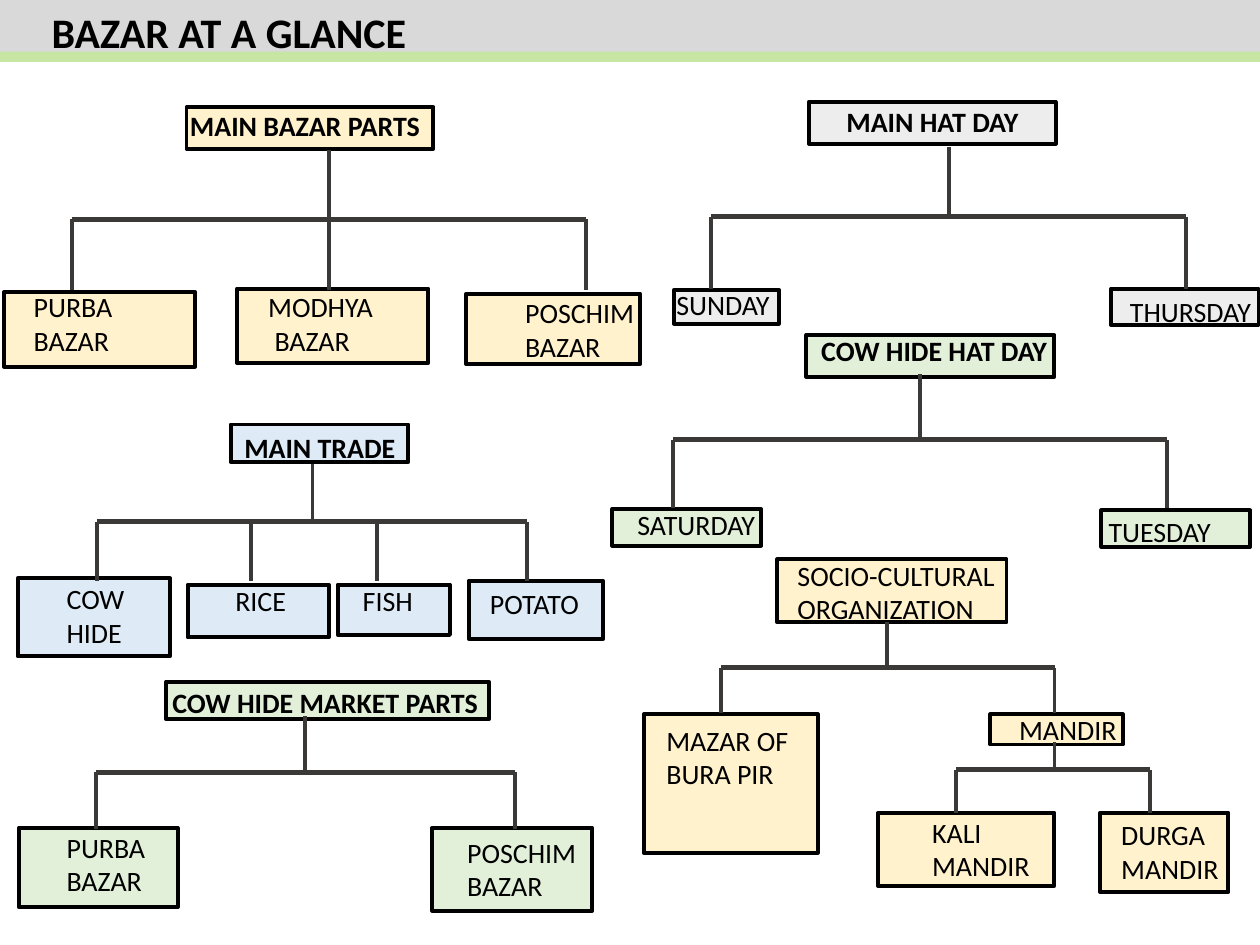
from dataclasses import dataclass

from lxml import etree
from pptx import Presentation
from pptx.dml.color import RGBColor
from pptx.enum import shapes as es, text as et
from pptx.oxml.ns import qn
from pptx.util import Pt

BLACK = RGBColor(0x00, 0x00, 0x00)
CHARCOAL = RGBColor(0x3B, 0x38, 0x38)
BAND_GREY = RGBColor(0xD9, 0xD9, 0xD9)
BAND_GREEN = RGBColor(0xC7, 0xE6, 0xA4)
CREAM = RGBColor(0xFF, 0xF2, 0xCC)
GREY = RGBColor(0xED, 0xED, 0xED)
BLUE = RGBColor(0xDE, 0xEB, 0xF7)
GREEN = RGBColor(0xE2, 0xF0, 0xD9)

FONT = "Calibri"
Area = tuple[float, float, float, float]  # left, top, width, height in points


@dataclass
class Node:
    text: str
    box: Area
    label: Area
    bold: bool = False
    last_indent: float = 0


@dataclass
class Branch:
    """A stem down to a bar, and drops from the bar to the boxes below."""
    stem_x: float
    top: float
    bar_y: float
    bottom: float
    drops: list[float]


@dataclass
class Tree:
    fill: RGBColor
    nodes: list[Node]
    branches: list[Branch]


TREES = [
    Tree(CREAM, [
        Node("MAIN BAZAR PARTS", (106.6, 61.2, 141.1, 23.8), (101.5, 58.3, 191.5, 46), bold=True),
        Node("PURBA BAZAR", (2.2, 167, 109.4, 42.5), (12.2, 162, 94.3, 65.5)),
        Node("MODHYA\nBAZAR", (135.4, 164.9, 109.4, 42.5), (146.2, 162, 89.3, 46), last_indent=3.6),
        Node("POSCHIM\nBAZAR", (266.4, 167.8, 99.4, 40.3), (293, 165.6, 92.2, 46)),
    ], [Branch(187.9, 85.7, 125.3, 165.6, [41, 187.9, 334.8])]),
    Tree(GREY, [
        Node("MAIN HAT DAY", (462.2, 58.3, 141.1, 23.8), (476.6, 56.2, 164.9, 48.2), bold=True),
        Node("SUNDAY", (385.2, 165.6, 59.8, 19.4), (379.4, 160.6, 87.1, 48.2)),
        Node("THURSDAY", (635, 164.9, 84.2, 20.9), (638.6, 164.9, 90, 27.4)),
    ], [Branch(542.2, 84.2, 123.8, 164.9, [406.1, 677.5])]),
    Tree(BLUE, [
        Node("MAIN TRADE", (131.8, 242.6, 101.5, 21.6), (132.5, 242.6, 108.7, 26.6), bold=True),
        Node("COW HIDE", (10.1, 330.5, 87.1, 44.6), (31, 329, 79.2, 65.5)),
        Node("RICE", (107.3, 334.1, 80.6, 30.2), (127.4, 329.8, 79.2, 46)),
        Node("FISH", (193, 334.1, 64.1, 28.8), (200.2, 329.8, 79.2, 46)),
        Node("POTATO", (267.8, 331.9, 77, 33.1), (272.9, 331.9, 71.3, 26.6)),
    ], [Branch(178.6, 265, 298.1, 331.9, [55.4, 143.3, 215.3, 301])]),
    Tree(GREEN, [
        Node("COW HIDE MARKET PARTS", (95, 389.5, 184.3, 21.6), (91.4, 388.1, 203, 46), bold=True),
        Node("PURBA BAZAR", (10.8, 473, 90.7, 45.4), (31, 470.9, 77, 65.5)),
        Node("POSCHIM\nBAZAR", (247, 473, 91.4, 47.5), (259.9, 473.8, 89.3, 46)),
    ], [Branch(174.2, 409, 441.4, 473.8, [54.7, 294.5])]),
    Tree(GREEN, [
        Node("COW HIDE HAT DAY", (460.8, 191.5, 141.8, 23.8), (462.2, 187.2, 171.4, 38.9), bold=True),
        Node("SATURDAY", (349.9, 290.9, 85, 20.9), (357.1, 286.6, 90.7, 38.9)),
        Node("TUESDAY", (629.3, 291.6, 85, 20.9), (626.4, 290.2, 88.6, 22.3)),
    ], [Branch(525.6, 213.8, 251.3, 290.2, [384.5, 666.7])]),
    Tree(CREAM, [
        Node("SOCIO-CULTURAL ORGANIZATION", (444.2, 319.7, 131, 36), (448.6, 315.4, 144.7, 65.5)),
        Node("MAZAR OF BURA PIR", (367.9, 408.2, 99.4, 79.2), (373.7, 409.7, 92.2, 65.5)),
        Node("MANDIR", (565.9, 408.2, 75.6, 17.3), (575.3, 403.9, 82.1, 26.6)),
        Node("KALI\nMANDIR", (501.8, 464.4, 100.8, 41.8), (525.6, 462.2, 77, 46)),
        Node("DURGA\nMANDIR", (628.6, 464.4, 73.4, 45.4), (633.6, 463.7, 72.7, 46)),
    ], [Branch(506.9, 355.7, 381.6, 407.5, [411.8, 602.6]),
        Branch(602.6, 424.1, 439.9, 464.4, [546.5, 657.4])]),
]


def write(sp, text: str, *, size: float = 16, bold: bool = False, last_indent: float = 0) -> None:
    tf = sp.text_frame
    tf.text = text
    tf.word_wrap = True
    tf.auto_size = et.MSO_AUTO_SIZE.SHAPE_TO_FIT_TEXT
    tf.vertical_anchor = et.MSO_ANCHOR.TOP
    for p in tf.paragraphs:
        p.alignment = et.PP_ALIGN.LEFT
        for r in p.runs:
            r.font.name = FONT
            r.font.size = Pt(size)
            r.font.bold = bold
            r.font.color.rgb = BLACK
    if last_indent:
        pPr = tf.paragraphs[-1]._p.get_or_add_pPr()
        pPr.set("marL", str(Pt(last_indent)))


def add_box(s, area: Area, fill: RGBColor, outlined: bool = True) -> None:
    sp = s.shapes.add_shape(es.MSO_SHAPE.RECTANGLE, *map(Pt, area))
    sp.shadow.inherit = False
    sp.fill.solid()
    sp.fill.fore_color.rgb = fill
    if outlined:
        sp.line.color.rgb = BLACK
        sp.line.width = Pt(2.25)
    else:
        sp.line.fill.background()


def add_line(s, x1: float, y1: float, x2: float, y2: float, width: float = 2.25) -> None:
    line = s.shapes.add_connector(es.MSO_CONNECTOR.STRAIGHT, Pt(x1), Pt(y1), Pt(x2), Pt(y2))
    line.line.color.rgb = CHARCOAL
    line.line.width = Pt(width)
    etree.SubElement(line._element.spPr, qn("a:effectLst"))


def add_branch(s, b: Branch) -> None:
    add_line(s, b.drops[0], b.bar_y, b.drops[-1], b.bar_y, width=3)
    add_line(s, b.stem_x, b.bar_y, b.stem_x, b.top)
    for x in b.drops:
        add_line(s, x, b.bar_y, x, b.bottom)


def main() -> None:
    prs = Presentation()
    prs.slide_width, prs.slide_height = Pt(720), Pt(540)
    s = prs.slides.add_slide(prs.slide_layouts[5])

    # Boxes lie under all lines and labels
    for tree in TREES:
        for node in tree.nodes:
            add_box(s, node.box, tree.fill)

    # Header bands, with the title brought in front of them
    add_box(s, (0, 0, 720, 30.2), BAND_GREY, outlined=False)
    add_box(s, (0, 29.5, 720, 5.8), BAND_GREEN, outlined=False)
    title = s.shapes.title
    title.left, title.top, title.width, title.height = map(Pt, (22.3, 0, 308.2, 36))
    write(title, "BAZAR AT A GLANCE", size=24, bold=True)
    title.element.getparent().append(title.element)

    # Branch lines and labels
    for tree in TREES:
        for branch in tree.branches:
            add_branch(s, branch)
        for node in tree.nodes:
            label = s.shapes.add_textbox(*map(Pt, node.label))
            write(label, node.text, bold=node.bold, last_indent=node.last_indent)

    prs.save("out.pptx")


if __name__ == "__main__":
    main()
